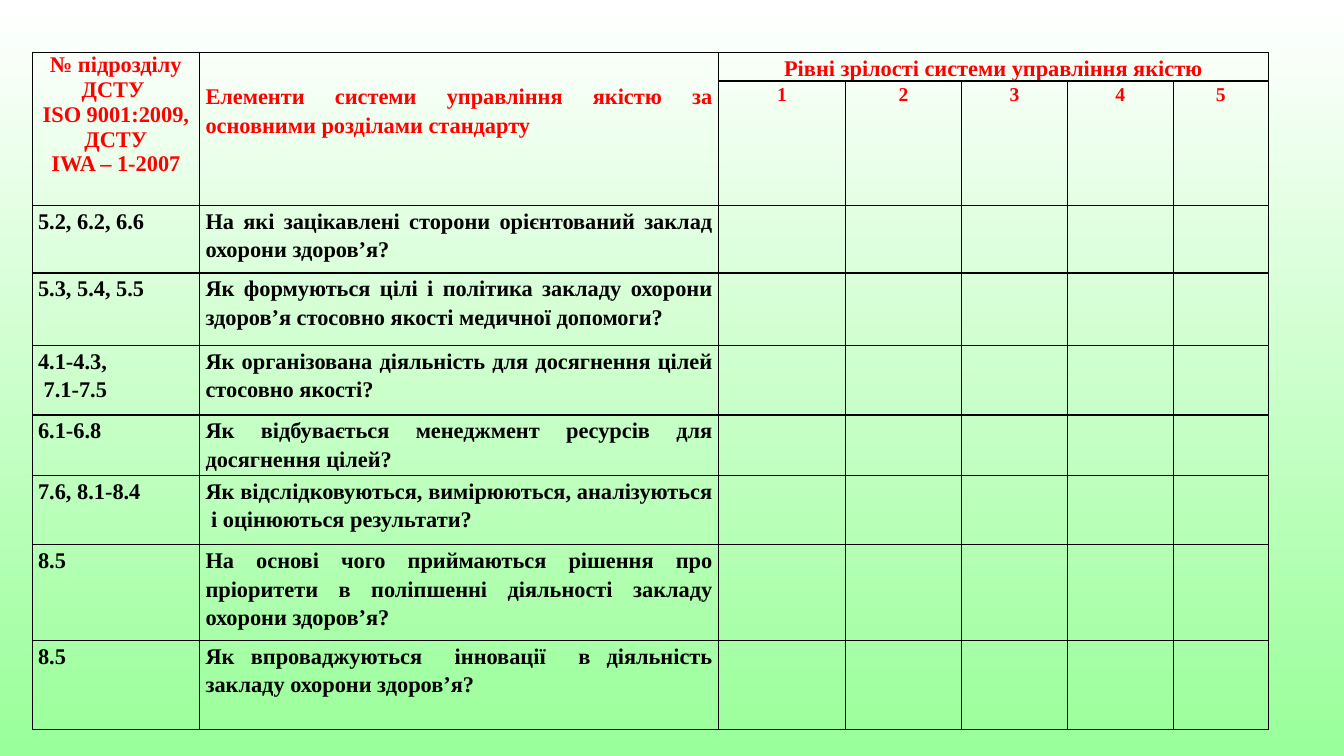
from dataclasses import dataclass

from lxml.etree import SubElement
from pptx import Presentation
from pptx.dml.color import RGBColor as Rgb
from pptx.enum.text import PP_ALIGN as Align
from pptx.oxml.ns import qn
from pptx.util import Cm, Pt

# Content
STANDARD = ["№ підрозділу", "ДСТУ ", "ISO 9001:2009,", "ДСТУ", "IWA – 1-2007"]
ELEMENTS = ["Елементи системи управління якістю за основними розділами стандарту"]
MATURITY = ["Рівні зрілості системи управління якістю"]
LEVELS = ["1", "2", "3", "4", "5"]
QUESTIONS = [
    (["5.2, 6.2, 6.6"],
     "На які зацікавлені сторони орієнтований заклад охорони здоров’я?"),
    (["5.3, 5.4, 5.5"],
     "Як формуються цілі і політика закладу охорони здоров’я стосовно якості медичної допомоги?"),
    (["4.1-4.3,", " 7.1-7.5"],
     "Як організована діяльність для досягнення цілей стосовно якості?"),
    (["6.1-6.8"],
     "Як відбувається менеджмент ресурсів для досягнення цілей?"),
    (["7.6, 8.1-8.4"],
     "Як відслідковуються, вимірюються, аналізуються  і оцінюються результати?"),
    (["8.5"],
     "На основі чого приймаються рішення про пріоритети в поліпшенні діяльності закладу охорони здоров’я?"),
    (["8.5"],
     "Як впроваджуються  інновації  в діяльність закладу охорони здоров’я?"),
]

# Layout, in centimetres
LEFT, TOP = 0.81, 1.32
COLUMN_WIDTHS = [4.22, 13.08, 3.2, 2.92, 2.67, 2.67, 2.39]
ROW_HEIGHTS = [0.66, 2.01, 1.7, 1.83, 1.75, 1.52, 1.75, 2.41, 2.24]
SIDE_MARGIN = 0.15
ELEMENTS_DROP = 0.72


@dataclass(frozen=True)
class Theme:
    font: str = "Times New Roman"
    heading: str = "FF0000"
    body: str = "000000"
    border: str = "000000"
    background: tuple = ("FFFFFF", "99FF99")
    text_size: int = 16
    level_size: int = 14
    border_width: int = 1
    spacing: float = 1.15


THEME = Theme()


def write(cell, lines, color=THEME.body, align=Align.JUSTIFY,
          size=THEME.text_size, spacing=THEME.spacing):
    cell.text_frame.text = "\n".join(lines)
    for paragraph in cell.text_frame.paragraphs:
        paragraph.alignment = align
        paragraph.line_spacing = spacing
        for run in paragraph.runs:
            run.font.name = THEME.font
            run.font.size = Pt(size)
            run.font.bold = True
            run.font.color.rgb = Rgb.from_string(color)


def style_cell(cell):
    cell.margin_left = cell.margin_right = Cm(SIDE_MARGIN)
    cell.margin_top = cell.margin_bottom = 0
    properties = cell._tc.get_or_add_tcPr()
    for side in ("a:lnL", "a:lnR", "a:lnT", "a:lnB"):
        line = SubElement(properties, qn(side), w=str(Pt(THEME.border_width)))
        fill = SubElement(line, qn("a:solidFill"))
        SubElement(fill, qn("a:srgbClr"), val=THEME.border)
    cell.fill.background()


def build_table(slide):
    table = slide.shapes.add_table(
        len(ROW_HEIGHTS), len(COLUMN_WIDTHS), Cm(LEFT), Cm(TOP),
        Cm(sum(COLUMN_WIDTHS)), Cm(sum(ROW_HEIGHTS))).table
    table.first_row = table.horz_banding = False
    for column, width in zip(table.columns, COLUMN_WIDTHS):
        column.width = Cm(width)
    for row, height in zip(table.rows, ROW_HEIGHTS):
        row.height = Cm(height)
    for cell in table.iter_cells():
        style_cell(cell)

    # Two-row heading
    for column in (0, 1):
        table.cell(0, column).merge(table.cell(1, column))
    table.cell(0, 2).merge(table.cell(0, len(COLUMN_WIDTHS) - 1))
    write(table.cell(0, 0), STANDARD, THEME.heading, Align.CENTER, spacing=1.0)
    write(table.cell(0, 1), ELEMENTS, THEME.heading)
    table.cell(0, 1).margin_top = Cm(ELEMENTS_DROP)
    write(table.cell(0, 2), MATURITY, THEME.heading, Align.CENTER)
    for column, level in enumerate(LEVELS, start=2):
        write(table.cell(1, column), [level], THEME.heading, Align.CENTER,
              THEME.level_size)

    # Questions by section of the standard
    for row, (sections, question) in enumerate(QUESTIONS, start=2):
        write(table.cell(row, 0), sections)
        write(table.cell(row, 1), [question])


def main():
    deck = Presentation()
    deck.slide_width, deck.slide_height = Cm(33.87), Cm(19.05)
    slide = deck.slides.add_slide(deck.slide_layouts[6])

    # Background, fading downwards
    backdrop = slide.background.fill
    backdrop.gradient()
    backdrop.gradient_angle = 270
    for stop, color in zip(backdrop.gradient_stops, THEME.background):
        stop.color.rgb = Rgb.from_string(color)

    build_table(slide)
    deck.save("out.pptx")


if __name__ == "__main__":
    main()
